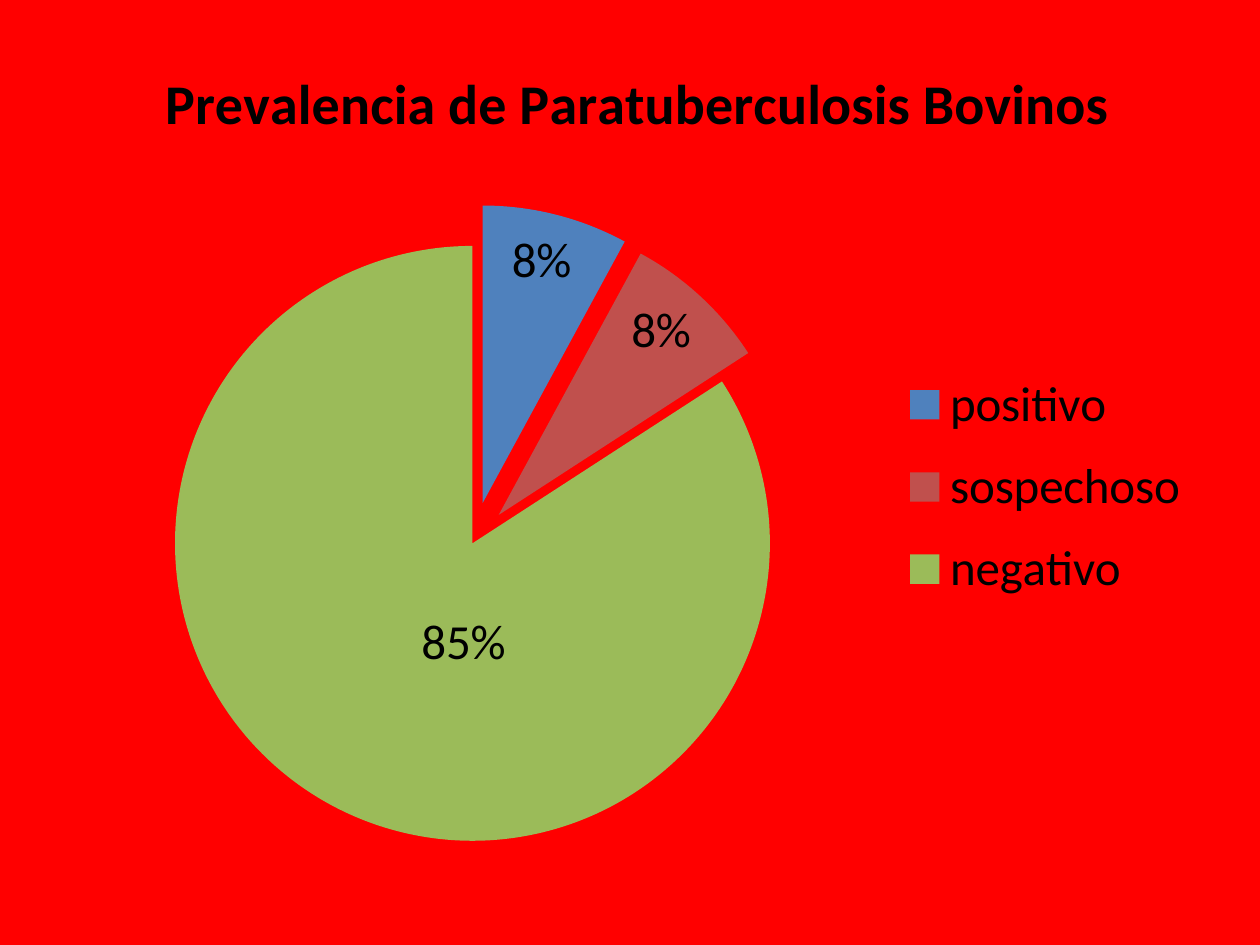
from dataclasses import dataclass
from typing import Optional

from lxml.etree import SubElement
from pptx import Presentation
from pptx.chart.data import CategoryChartData
from pptx.dml.color import RGBColor
from pptx.enum.chart import XL_CHART_TYPE, XL_LABEL_POSITION, XL_LEGEND_POSITION
from pptx.oxml import parse_xml
from pptx.oxml.ns import nsdecls, qn
from pptx.util import Emu, Pt

EMU_PER_PX = 914400 / 126
WIDTH, HEIGHT = 1260, 945
RED = RGBColor(0xFF, 0x00, 0x00)
BLACK = RGBColor(0x00, 0x00, 0x00)
BLUE = RGBColor(0x4F, 0x81, 0xBD)
BRICK = RGBColor(0xC0, 0x50, 0x4D)
GREEN = RGBColor(0x9B, 0xBB, 0x59)
PERCENT_FORMAT = '0"%"'
TITLE = "Prevalencia de Paratuberculosis Bovinos"
TITLE_FONT = {"name": "Calibri", "size": Pt(32), "bold": True}
BODY_FONT = {"name": "Calibri", "size": Pt(28), "bold": False}


@dataclass(frozen=True)
class Slice:
    name: str
    value: int
    color: RGBColor
    explosion: int
    label_position: XL_LABEL_POSITION
    label_shift: tuple[int, int]


SLICES = [
    Slice("positivo", 8, BLUE, 14, XL_LABEL_POSITION.INSIDE_END, (17, 10)),
    Slice("sospechoso", 8, BRICK, 13, XL_LABEL_POSITION.INSIDE_END, (-5, 0)),
    Slice("negativo", 85, GREEN, 0, XL_LABEL_POSITION.CENTER, (62, -31)),
]


def px(length: int) -> Emu:
    return Emu(round(length * EMU_PER_PX))


def format_font(font, values: dict) -> None:
    for name, value in values.items():
        setattr(font, name, value)
    font.color.rgb = BLACK


def make_layout(left: int, top: int, width: int = 0, height: int = 0,
                inner: bool = False, edge: bool = True):
    layout = parse_xml(f"<c:layout {nsdecls('c')}><c:manualLayout/></c:layout>")
    entries = [("layoutTarget", "inner")] if inner else []
    if edge:
        entries += [("xMode", "edge"), ("yMode", "edge")]
    entries += [("x", left / WIDTH), ("y", top / HEIGHT)]
    if width:
        entries += [("w", width / WIDTH), ("h", height / HEIGHT)]
    for tag, value in entries:
        text = value if isinstance(value, str) else f"{value:.4f}"
        SubElement(layout[0], qn(f"c:{tag}")).set("val", text)
    return layout


def place(element, layout, after: Optional[str] = None) -> None:
    for old in element.findall(qn("c:layout")):
        element.remove(old)
    if after is None:
        element.insert(0, layout)
    else:
        element.find(qn(after)).addnext(layout)


def style_slice(series, index: int, item: Slice) -> None:
    point = series.points[index]
    point.format.fill.solid()
    point.format.fill.fore_color.rgb = item.color
    point.format.line.fill.background()
    data_point = series._element.findall(qn("c:dPt"))[index]
    data_point.find(qn("c:spPr")).addprevious(
        parse_xml(f'<c:explosion {nsdecls("c")} val="{item.explosion}"/>'))

    format_font(point.data_label.font, BODY_FONT)
    point.data_label.position = item.label_position
    label = series._element.find(qn("c:dLbls")).findall(qn("c:dLbl"))[index]
    number_format = parse_xml(f'<c:numFmt {nsdecls("c")} sourceLinked="0"/>')
    number_format.set("formatCode", PERCENT_FORMAT)
    label.find(qn("c:idx")).addnext(number_format)
    place(label, make_layout(*item.label_shift, edge=False), "c:idx")


def add_pie(slide) -> None:
    data = CategoryChartData()
    data.categories = [item.name for item in SLICES]
    data.add_series("Series 1", [item.value for item in SLICES])
    chart = slide.shapes.add_chart(
        XL_CHART_TYPE.PIE, 0, 0, px(WIDTH), px(HEIGHT), data).chart
    format_font(chart.font, {"name": "Calibri", "size": Pt(10)})
    chart._chartSpace.find(qn("c:chart")).addnext(parse_xml(
        f"<c:spPr {nsdecls('c', 'a')}><a:noFill/><a:ln><a:noFill/></a:ln></c:spPr>"))

    chart.has_title = True
    paragraph = chart.chart_title.text_frame.paragraphs[0]
    run = paragraph.add_run()
    run.text = TITLE
    format_font(run.font, TITLE_FONT)
    chart.chart_title.include_in_layout = False
    place(chart.chart_title._element, make_layout(155, 54), "c:tx")

    chart.has_legend = True
    chart.legend.position = XL_LEGEND_POSITION.RIGHT
    chart.legend.include_in_layout = False
    format_font(chart.legend.font, BODY_FONT)
    place(chart.legend._element, make_layout(895, 352, 300, 270), "c:legendPos")

    plot = chart.plots[0]
    plot.vary_by_categories = True
    place(chart._chartSpace.find(qn("c:chart")).find(qn("c:plotArea")),
          make_layout(175, 246, 595, 595, inner=True))
    series = plot.series[0]
    labels = series.data_labels
    labels.show_value = True
    labels.number_format = PERCENT_FORMAT
    labels.number_format_is_linked = False
    format_font(labels.font, BODY_FONT)
    for index, item in enumerate(SLICES):
        style_slice(series, index, item)


def main() -> None:
    presentation = Presentation()
    presentation.slide_width = px(WIDTH)
    presentation.slide_height = px(HEIGHT)
    slide = presentation.slides.add_slide(presentation.slide_layouts[6])
    slide.background.fill.solid()
    slide.background.fill.fore_color.rgb = RED
    add_pie(slide)
    presentation.save("out.pptx")


if __name__ == "__main__":
    main()
